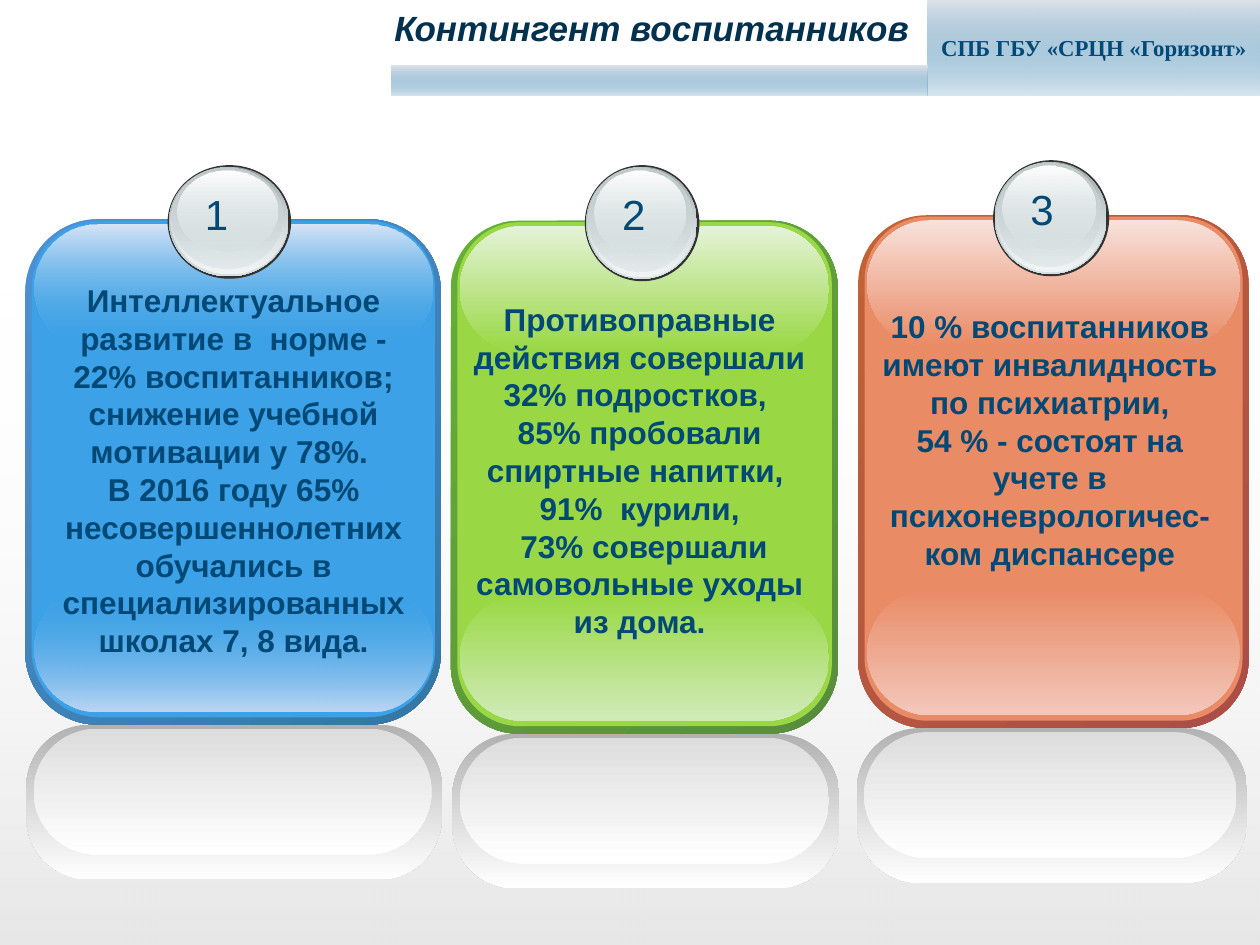
from lxml import etree
from pptx import Presentation
from pptx.dml.color import RGBColor
from pptx.enum.shapes import MSO_SHAPE
from pptx.enum.text import MSO_ANCHOR, MSO_AUTO_SIZE, PP_ALIGN
from pptx.oxml.ns import qn
from pptx.util import Cm, Pt

RECT, ROUND, OVAL = MSO_SHAPE.RECTANGLE, MSO_SHAPE.ROUNDED_RECTANGLE, MSO_SHAPE.OVAL
LEFT, CENTER = PP_ALIGN.LEFT, PP_ALIGN.CENTER
MIDDLE, GROW = MSO_ANCHOR.MIDDLE, MSO_AUTO_SIZE.SHAPE_TO_FIT_TEXT

COLORS = {
    "white": "FFFFFF", "black": "000000", "text": "004976", "title": "00314F",
    "header_light": "DFE3EA", "header_blue": "00629E",
    "orb_rim": "333333", "orb_dark": "99A1A2", "orb_mid": "C1CBCC",
    "orb_light": "D6E1E2", "orb_pale": "F2F5F5",
    "reflection": "B2B2B2", "reflection_inner": "DDDDDD",
    "blue": "3CA1E6", "blue_from": "4E91D4", "blue_to": "3477A4",
    "blue_top": "D7E5F7", "blue_bottom": "BDD6F3",
    "green": "99D844", "green_from": "66AF35", "green_to": "588D3D",
    "green_top": "E4F3D8", "green_bottom": "D0EBB9",
    "orange": "E98B65", "orange_from": "C16237", "orange_to": "AB4E47",
    "orange_top": "F8E1DB", "orange_bottom": "F3C7BB",
}
FORMATS = {
    "number": {"name": "Arial", "size": Pt(24)},
    "body": {"name": "Arial", "size": Pt(18), "bold": True},
    "header": {"name": "Times New Roman", "size": Pt(13), "bold": True},
    "title": {"name": "Arial", "size": Pt(20), "bold": True, "italic": True},
}
ORB_LAYERS = [
    (0, 0, 0, 0, ["orb_rim"]),
    (0.03, 0.03, 0.08, 0.08, ["orb_dark", "orb_light"]),
    (0.05, 0.03, 0.13, 0.13, [("orb_light", 0), "orb_pale"]),
    (0.08, 0.05, 0.25, 0.25, ["orb_mid", ("orb_light", 48)]),
    (0.2, 0.1, 0.48, 0.64, ["white", ("orb_light", 38)]),
]
CARDS = [
    {"hue": "blue", "fade": 0, "body": (0.51, 4.42, 8.38, 10.19), "mirror_x": 0.53,
     "orb": (3.38, 3.33, 2.49, 2.29), "text_box": (0.71, 5.54, 8, 7.95),
     "text": ["Интеллектуальное развитие в  норме - 22% воспитанников; "
              "снижение учебной мотивации у 78%. ",
              "В 2016 году 65% несовершеннолетних обучались в "
              "специализированных школах 7, 8 вида."]},
    {"hue": "green", "fade": 100, "body": (9.09, 4.45, 7.8, 10.34), "mirror_x": 9.12,
     "orb": (11.79, 3.33, 2.31, 2.34), "text_box": (9.3, 5.92, 7.19, 7.19),
     "text": ["Противоправные действия совершали 32% подростков, ",
              "85% пробовали спиртные напитки, ",
              "91%  курили,",
              " 73% совершали самовольные уходы из дома."]},
    {"hue": "orange", "fade": 100, "body": (17.3, 4.34, 7.87, 10.34), "mirror_x": 17.27,
     "orb": (20.02, 3.23, 2.34, 2.34), "text_box": (17.42, 6.07, 7.49, 5.64),
     "text": ["10 % воспитанников имеют инвалидность по психиатрии,",
              "54 % - состоят на учете в психоневрологичес-ком диспансере"]},
]


class Deck:
    def __init__(self, width, height):
        self.prs = Presentation()
        self.prs.slide_width, self.prs.slide_height = Cm(width), Cm(height)
        self.s = self.prs.slides.add_slide(self.prs.slide_layouts[6])
        fill = self.s.background.fill
        fill.solid()
        fill.fore_color.rgb = self.rgb("white")
        self.shapes = self.s.shapes

    def rgb(self, name):
        return RGBColor.from_string(COLORS[name])

    def shape(self, kind, box, colors, angle=90, adj=None):
        sp = self.shapes.add_shape(kind, *map(Cm, box))
        sp.shadow.inherit = False
        sp.line.fill.background()
        if adj is not None:
            sp.adjustments[0] = adj
        if len(colors) == 1:
            sp.fill.solid()
            sp.fill.fore_color.rgb = self.rgb(colors[0])
            return sp
        sp.fill.gradient()
        sp.fill.gradient_angle = 360 - angle
        stops = [c if isinstance(c, tuple) else (c, 100) for c in colors]
        for stop, (name, _) in zip(sp.fill.gradient_stops, stops):
            stop.color.rgb = self.rgb(name)
        nodes = sp._element.spPr.iter(qn("a:srgbClr"))
        for node, (_, opacity) in zip(list(nodes), stops):
            if opacity < 100:
                etree.SubElement(node, qn("a:alpha")).set("val", str(opacity * 1000))
        return sp

    def put_lines(self, sp, lines, style, color="text", align=CENTER, wrap=True):
        tf = sp.text_frame
        tf.word_wrap = wrap
        for i, line in enumerate(lines):
            p = tf.add_paragraph() if i else tf.paragraphs[0]
            p.alignment = align
            r = p.add_run()
            r.text = line
            for key, value in FORMATS[style].items():
                setattr(r.font, key, value)
            r.font.color.rgb = self.rgb(color)
        return tf

    def text(self, box, lines, style, **options):
        sp = self.shapes.add_textbox(*map(Cm, box))
        self.put_lines(sp, lines, style, **options).auto_size = GROW

    def orb(self, box, number):
        x, y, w, h = box
        for dx, dy, dw, dh, colors in ORB_LAYERS:
            self.shape(OVAL, (x + dx, y + dy, w - dw, h - dh), colors)
        self.text((x + 0.5, y + 0.34, 1, 1.27), [str(number)], "number",
                  align=LEFT, wrap=False)

    def card(self, number, card):
        x, y, w, h = card["body"]
        hue, mx = card["hue"], card["mirror_x"]
        bottom, inner_w, glow_h = y + h, w - 0.36, 2.54
        edge = (hue, card["fade"])
        self.shapes = self.s.shapes.add_group_shape().shapes
        self.shape(ROUND, card["body"], [f"{hue}_from", f"{hue}_to"], 45, 0.175)
        self.shape(ROUND, (x + 0.13, y + 0.03, w - 0.25, h - 0.18), [hue], adj=0.167)
        self.shape(ROUND, (x + 0.18, bottom - 2.8, inner_w, glow_h),
                   [edge, f"{hue}_bottom"], adj=0.5)
        self.shape(ROUND, (x + 0.18, y + 0.1, inner_w, glow_h),
                   [f"{hue}_top", edge], adj=0.5)
        self.shape(ROUND, (mx, bottom, w, 3.12), ["reflection", "white"], adj=0.404)
        self.shape(ROUND, (mx + 0.15, bottom + 0.08, inner_w, glow_h),
                   ["reflection_inner", "white"], adj=0.5)
        self.orb(card["orb"], number)
        self.shapes = self.s.shapes
        self.text(card["text_box"], card["text"], "body")

    def header(self, title, owner):
        colors = ["header_light", ("header_blue", 15)]
        sp = self.shape(RECT, (18.69, 0, 6.71, 1.93), colors)
        self.put_lines(sp, [owner], "header", wrap=False).vertical_anchor = MIDDLE
        self.shape(RECT, (7.9, 1.32, 10.79, 0.61), colors)
        self.text((7.7, 0, 11, 1.12), [title], "title", color="title",
                  align=LEFT, wrap=False)


def main():
    deck = Deck(25.4, 19.05)
    deck.shape(RECT, (0, 5.61, 25.4, 13.44), [("black", 10), ("white", 0)], 270)
    for number, card in enumerate(CARDS, 1):
        deck.card(number, card)
    deck.header("Контингент воспитанников", "СПБ ГБУ «CРЦН «Горизонт»")
    deck.prs.save("out.pptx")


if __name__ == "__main__":
    main()
